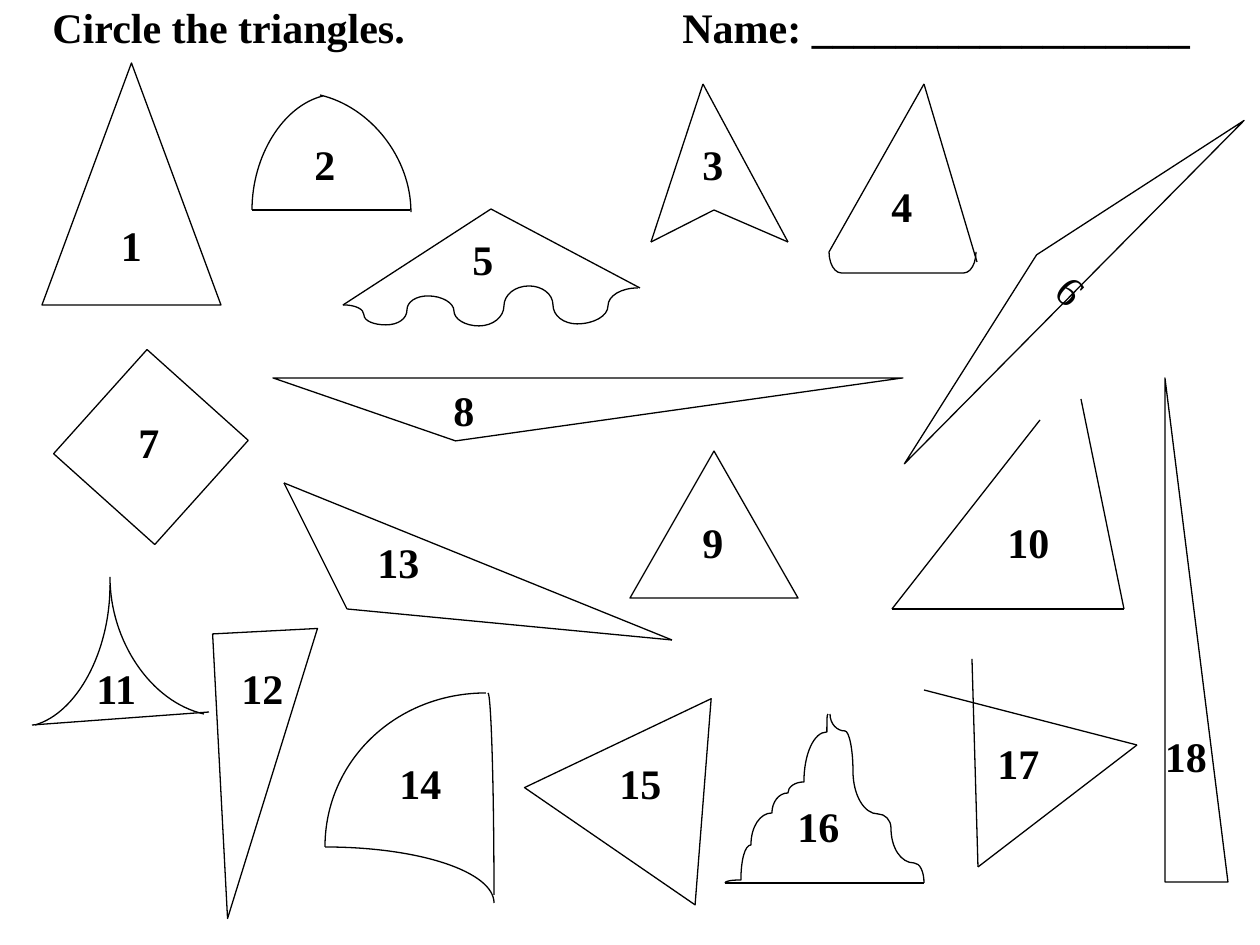
"""Build a worksheet slide of eighteen numbered figures, some of them triangles."""
from dataclasses import dataclass
from itertools import cycle, pairwise

from lxml import etree
from pptx import Presentation
from pptx.dml.color import RGBColor
from pptx.enum.shapes import MSO_CONNECTOR, MSO_SHAPE
from pptx.enum.text import MSO_ANCHOR, MSO_AUTO_SIZE, PP_ALIGN
from pptx.oxml.ns import qn
from pptx.util import Emu, Pt

STRAIGHT = MSO_CONNECTOR.STRAIGHT
TRIANGLE = MSO_SHAPE.ISOSCELES_TRIANGLE
RIGHT_TRIANGLE = MSO_SHAPE.RIGHT_TRIANGLE
SQUARE = MSO_SHAPE.RECTANGLE
BRACKET = MSO_SHAPE.LEFT_BRACKET
MIDDLE = MSO_ANCHOR.MIDDLE
CENTER = PP_ALIGN.CENTER
LEFT = PP_ALIGN.LEFT
FIT_TEXT = MSO_AUTO_SIZE.SHAPE_TO_FIT_TEXT

SCALE = 914400 / 126
SLIDE_SIZE = (1260, 945)
LABEL_HEIGHT = 63
LABEL_WIDTHS = {1: 47, 2: 67}
HEADING_BOX = (40, -5, 1163, 63)
NAME_TAB = 630
ROUNDNESS = 0.56
UPRIGHT, LEVEL = "upright", "level"


@dataclass(frozen=True)
class Theme:
    font: str = "Times New Roman"
    ink: RGBColor = RGBColor(0, 0, 0)
    paper: RGBColor = RGBColor(255, 255, 255)
    size: Pt = Pt(24)
    stroke: Pt = Pt(0.75)


THEME = Theme()

HEADING = "Circle the triangles.\tName: __________________"

SELF_LABELLED_FIGURES = [
    ("6", dict(kind=TRIANGLE, box=(814, 247, 483, 53), turn=314.7, filled=True),
     dict(bold=False, vertical=True)),
    ("1", dict(kind=TRIANGLE, box=(42, 63, 179, 242)), {}),
    ("18", dict(kind=RIGHT_TRIANGLE, box=(1165, 378, 63, 504), filled=True), {}),
]

WAVE_TURNS = [(343, 305), (386, 325), (428, 296), (479, 326), (529, 286), (577, 324), (638, 288)]
LEFT_LEDGES = [(725, 883), (741, 880), (751, 845), (772, 813),
               (788, 793), (804, 782), (827, 732), (828, 714)]
RIGHT_LEDGES = [(830, 714), (845, 731), (853, 771), (878, 814), (891, 828), (914, 863), (924, 883)]

GROUPED_FIGURES = [
    dict(number="16", label_at=(785, 794), sides=[(725, 883), (924, 883)],
         stairs=[(LEFT_LEDGES, [UPRIGHT]), (RIGHT_LEDGES, [UPRIGHT, LEVEL])]),
    dict(number="2", label_at=(302, 132), sides=[(252, 210), (410, 210)],
         arcs=[[(252, 210), (252, 113), (323, 96)], [(411, 212), (411, 116), (320, 95)]]),
    dict(number="3", label_at=(690, 132),
         sides=[(703, 84), (651, 242), (714, 210), (788, 242), (703, 84)]),
    dict(number="4", label_at=(879, 174), sides=[(829, 252), (924, 84), (977, 262)],
         preset=dict(kind=BRACKET, box=(892, 189, 21, 147), turn=270, flip=True, adjust=0.58)),
    dict(number="5", label_at=(460, 227), sides=[(343, 305), (491, 209), (640, 288)],
         waves=[WAVE_TURNS]),
    dict(number="7", label_at=(126, 410),
         preset=dict(kind=SQUARE, box=(81, 379, 140, 136), turn=311.9)),
    dict(number="8", label_at=(441, 378),
         preset=dict(kind=TRIANGLE, box=(273, 378, 630, 63), flip=True, adjust=0.29)),
    dict(number="9", label_at=(690, 510),
         preset=dict(kind=TRIANGLE, box=(630, 451, 168, 147))),
    dict(number="10", label_at=(995, 510),
         sides=[(1040, 420), (892, 609), (1124, 609), (1081, 399)]),
    dict(number="11", label_at=(84, 656), sides=[(209, 712), (32, 725)],
         arcs=[[(110, 585), (110, 704), (35, 725)], [(110, 577), (110, 692), (204, 714)]]),
    dict(number="12", label_at=(229, 656),
         preset=dict(kind=RIGHT_TRIANGLE, box=(130, 721, 285, 105), turn=87)),
    dict(number="13", label_at=(365, 530),
         sides=[(347, 609), (672, 640), (284, 483), (347, 609)]),
    dict(number="14", label_at=(387, 751),
         arcs=[[(486, 693), (325, 693), (325, 847)],
               [(325, 847), (494, 847), (494, 903)],
               [(488, 693), (494, 693), (494, 895)]]),
    dict(number="15", label_at=(607, 751),
         preset=dict(kind=TRIANGLE, box=(557, 683, 207, 179), turn=34.5)),
    dict(number="17", label_at=(985, 731),
         sides=[(972, 659), (978, 867), (1137, 745), (924, 690)]),
]


def emu(*lengths):
    return [Emu(round(length * SCALE)) for length in lengths]


def toward(start, goal, share):
    return tuple(a + (b - a) * share for a, b in zip(start, goal))


def stair_arcs(ledges, directions):
    return [[start, (start[0], end[1]) if direction == UPRIGHT else (end[0], start[1]), end]
            for (start, end), direction in zip(pairwise(ledges), cycle(directions))]


def wave_arcs(turns):
    arcs = []
    for start, end in pairwise(turns):
        middle = toward(start, end, 0.5)
        arcs += [[start, (middle[0], start[1]), middle], [middle, (middle[0], end[1]), end]]
    return arcs


def write(holder, text, bold=True, align=LEFT, anchor=None, vertical=False, tab=None):
    frame = holder.text_frame
    frame.word_wrap = False
    if anchor is not None:
        frame.vertical_anchor = anchor
    else:
        frame.auto_size = FIT_TEXT
    if vertical:
        frame._txBody.bodyPr.set("vert", "eaVert")
    paragraph = frame.paragraphs[0]
    paragraph.alignment = align
    if tab:
        stops = etree.SubElement(paragraph._p.get_or_add_pPr(), qn("a:tabLst"))
        etree.SubElement(stops, qn("a:tab"), pos=str(emu(tab)[0]), algn="l")
    run = paragraph.add_run()
    run.text = text
    run.font.name, run.font.size, run.font.bold = THEME.font, THEME.size, bold
    run.font.color.rgb = THEME.ink


def ink_line(line):
    line.color.rgb = THEME.ink
    line.width = THEME.stroke


def outline(shape, filled=False):
    shape.shadow.inherit = False
    ink_line(shape.line)
    if filled:
        shape.fill.solid()
        shape.fill.fore_color.rgb = THEME.paper
    else:
        shape.fill.background()


def draw_preset(shapes, kind, box, turn=0, flip=False, adjust=None, filled=False):
    shape = shapes.add_shape(kind, *emu(*box))
    shape.rotation = turn
    if flip:
        shape._element.spPr.xfrm.set("flipV", "1")
    if adjust is not None:
        shape.adjustments[0] = adjust
    outline(shape, filled)
    return shape


def draw_sides(shapes, corners):
    for start, end in pairwise(corners):
        side = shapes.add_connector(STRAIGHT, *emu(*start, *end))
        ink_line(side.line)
        etree.SubElement(side._element.spPr, qn("a:effectLst"))


def draw_curve(shapes, arcs):
    builder = shapes.build_freeform(*arcs[0][0], scale=SCALE)
    for start, corner, end in arcs:
        handles = [toward(knot, corner, ROUNDNESS) for knot in (start, end)]
        builder.add_line_segments([*handles, end], close=False)
    curve = builder.convert_to_shape()
    outline(curve)
    contour = next(curve._element.iter(qn("a:path")))
    segments = contour.findall(qn("a:lnTo"))
    for arc_segments in zip(*[iter(segments)] * 3):
        bezier = etree.SubElement(contour, qn("a:cubicBezTo"))
        for segment in arc_segments:
            bezier.append(segment[0])
            contour.remove(segment)


def draw_figure(slide, number, label_at, sides=(), arcs=(), stairs=(), waves=(), preset=None):
    parts = slide.shapes.add_group_shape().shapes
    draw_sides(parts, sides)
    curves = [[arc] for arc in arcs]
    curves += [stair_arcs(*stair) for stair in stairs]
    curves += [wave_arcs(turns) for turns in waves]
    for curve in curves:
        draw_curve(parts, curve)
    if preset:
        draw_preset(parts, **preset)
    label_size = (LABEL_WIDTHS[len(number)], LABEL_HEIGHT)
    write(parts.add_textbox(*emu(*label_at, *label_size)), number)


def main():
    deck = Presentation()
    deck.slide_width, deck.slide_height = emu(*SLIDE_SIZE)
    slide = deck.slides.add_slide(deck.slide_layouts[6])
    for number, preset, style in SELF_LABELLED_FIGURES:
        figure = draw_preset(slide.shapes, **preset)
        write(figure, number, align=CENTER, anchor=MIDDLE, **style)
    for figure in GROUPED_FIGURES:
        draw_figure(slide, **figure)
    write(slide.shapes.add_textbox(*emu(*HEADING_BOX)), HEADING, tab=NAME_TAB)
    deck.save("out.pptx")


if __name__ == "__main__":
    main()
